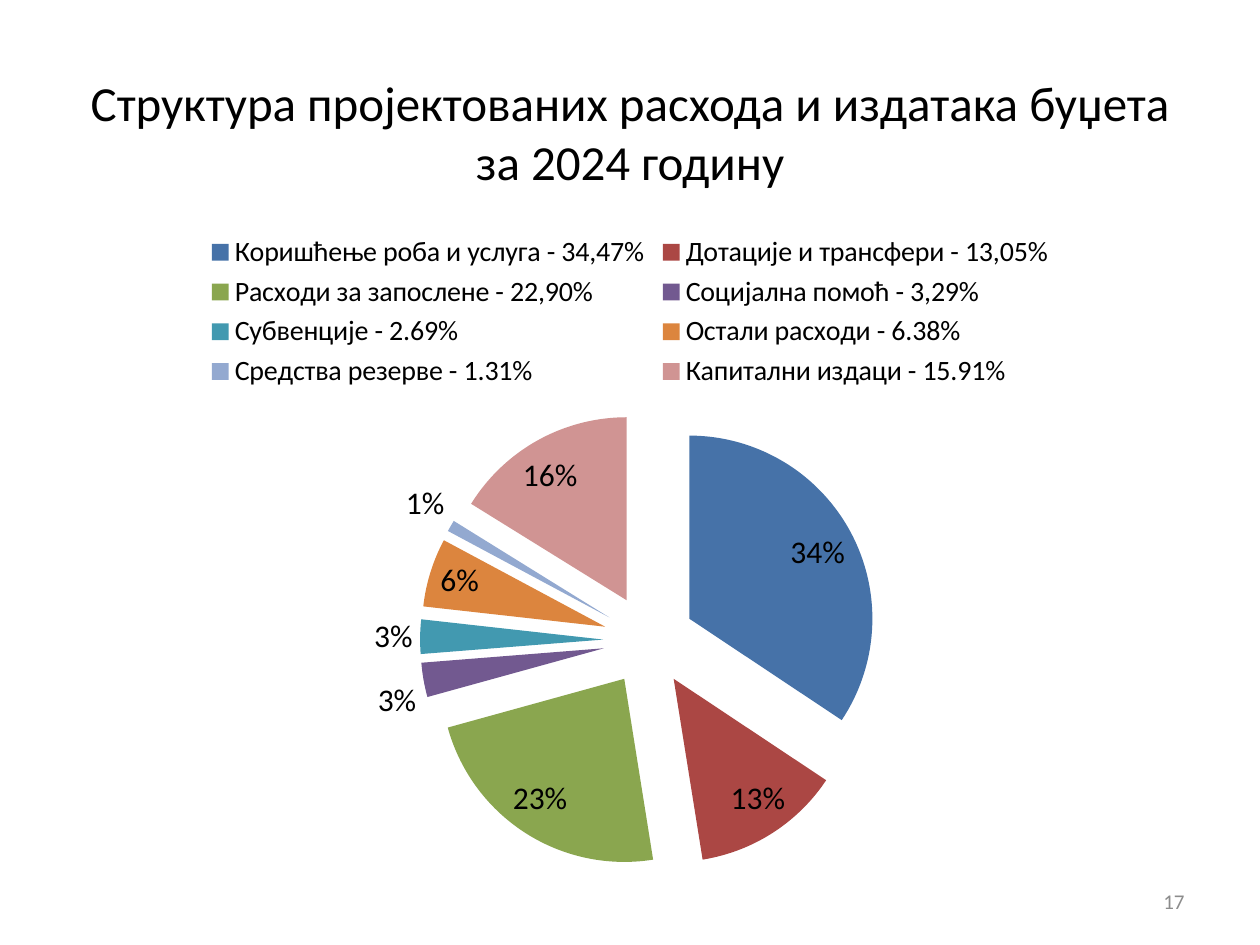
from lxml.etree import Element
from pptx import Presentation
from pptx.chart.data import CategoryChartData
from pptx.dml.color import RGBColor
from pptx.enum.chart import XL_CHART_TYPE, XL_LABEL_POSITION, XL_LEGEND_POSITION
from pptx.enum.text import MSO_ANCHOR, PP_ALIGN
from pptx.oxml.ns import qn
from pptx.util import Inches, Pt

FONT = "Calibri"
EXPENSES = [
    ("Коришћење роба и услуга - 34,47%", 34, "4672A8"),
    ("Дотације и трансфери - 13,05%", 13, "AB4744"),
    ("Расходи за запослене - 22,90%", 23, "8AA64F"),
    ("Социјална помоћ - 3,29%", 3, "725990"),
    ("Субвенције - 2.69%", 3, "4299B0"),
    ("Остали расходи - 6.38%", 6, "DC853E"),
    ("Средства резерве - 1.31%", 1, "93A9D0"),
    ("Капитални издаци - 15.91%", 16, "D09493"),
]


def color(value):
    """Turn a hex string into a colour."""
    return RGBColor.from_string(value)


def apply_format(target, values):
    """Set each attribute of the target from a dict."""
    for name, value in values.items():
        setattr(target, name, value)


def style_font(font, size, hue="000000"):
    """Give a font its face, size and colour."""
    apply_format(font, {"name": FONT, "size": Pt(size), "bold": False})
    font.color.rgb = color(hue)


def add_text(page, box, text, size, hue, align):
    """Place one vertically centred paragraph in the box."""
    frame = page.shapes.add_textbox(*map(Inches, box)).text_frame
    apply_format(frame, {"word_wrap": True, "vertical_anchor": MSO_ANCHOR.MIDDLE})
    para = frame.paragraphs[0]
    para.alignment = align
    span = para.add_run()
    span.text = text
    style_font(span.font, size, hue)


def explode(series, percent):
    """Pull all slices of a pie series away from its centre."""
    explosion = Element(qn("c:explosion"), val=str(percent))
    series._element.find(qn("c:dPt")).addprevious(explosion)


def add_expense_pie(page, box):
    """Place the exploded pie of expenses with its legend on top."""
    data = CategoryChartData()
    data.categories = [name for name, _, _ in EXPENSES]
    data.add_series("Series 1", [share for _, share, _ in EXPENSES])
    chart = page.shapes.add_chart(XL_CHART_TYPE.PIE, *map(Inches, box), data).chart
    apply_format(chart, {"has_title": False, "has_legend": True})
    style_font(chart.font, 18)

    legend = chart.legend
    apply_format(legend, {"position": XL_LEGEND_POSITION.TOP, "include_in_layout": False})
    style_font(legend.font, 16)

    plot = chart.plots[0]
    apply_format(plot, {"vary_by_categories": True, "has_data_labels": True})
    labels = plot.data_labels
    apply_format(labels, {
        "show_percentage": True,
        "show_value": False,
        "number_format": "0%",
        "number_format_is_linked": False,
        "position": XL_LABEL_POSITION.BEST_FIT,
    })
    style_font(labels.font, 18)

    series = plot.series[0]
    for index, (_, _, hue) in enumerate(EXPENSES):
        fill = series.points[index].format.fill
        fill.solid()
        fill.fore_color.rgb = color(hue)
    explode(series, 25)


def main():
    """Build the budget expense slide."""
    deck = Presentation()
    apply_format(deck, {"slide_width": Inches(10), "slide_height": Inches(7.5)})
    page = deck.slides.add_slide(deck.slide_layouts[6])
    add_text(page, (0.5, 0.58, 9, 0.92),
             "Структура пројектованих расхода и издатака буџета за 2024 годину",
             28, "000000", PP_ALIGN.CENTER)
    add_expense_pie(page, (0.5, 1.75, 9, 5.5))
    add_text(page, (7.17, 6.95, 2.33, 0.4), "17", 12, "8C8C8C", PP_ALIGN.RIGHT)
    deck.save("out.pptx")


if __name__ == "__main__":
    main()
